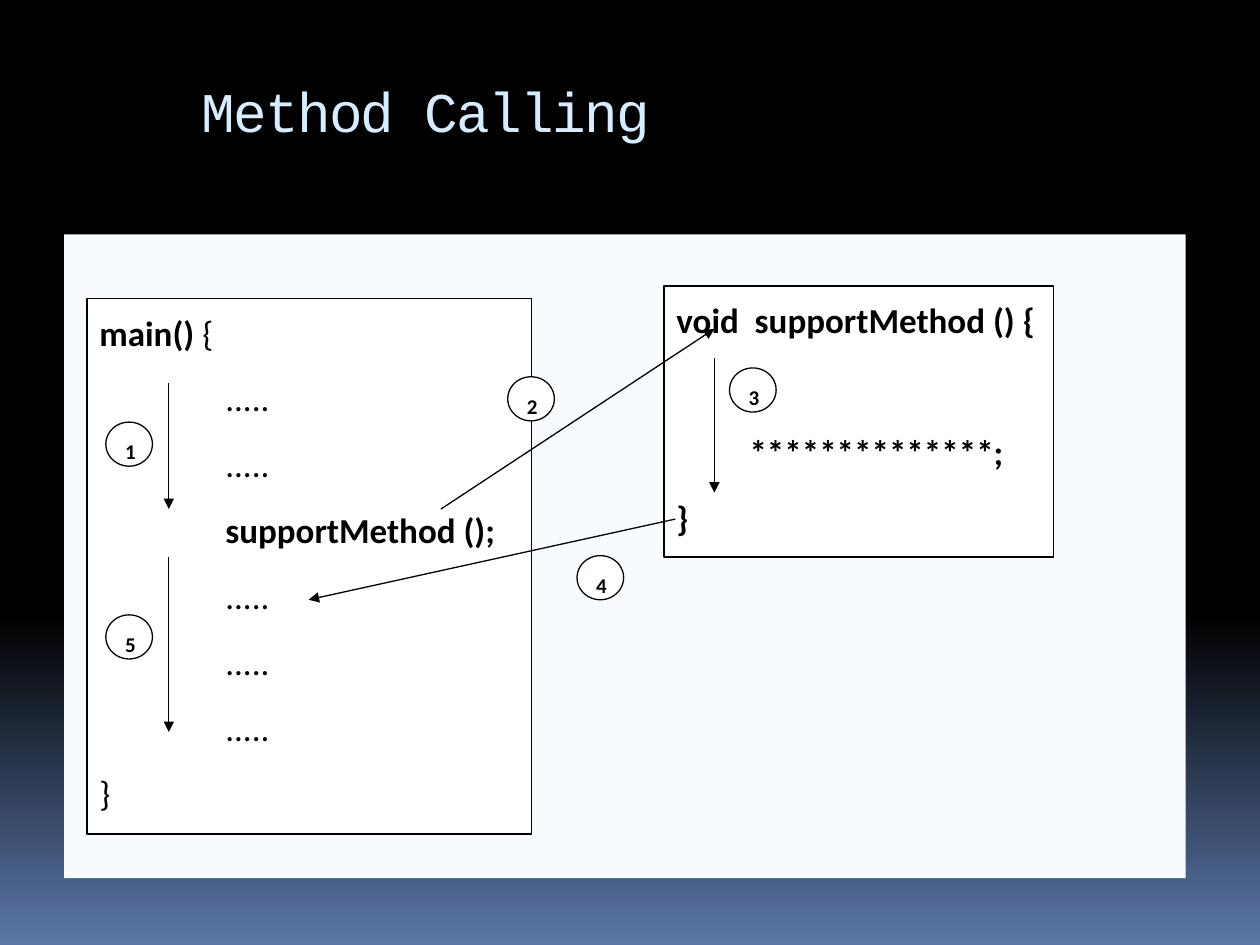
from dataclasses import dataclass

from lxml import etree
from pptx import Presentation
from pptx import util as u
from pptx.dml.color import RGBColor
from pptx.enum import shapes, text
from pptx.oxml.ns import qn


@dataclass(frozen=True)
class Theme:
    ink: str = "000000"
    paper: str = "FFFFFF"
    panel: str = "F7FBFF"
    title: str = "D6ECFF"
    glow: str = "5B77A8"
    mono: str = "Courier New"
    sans: str = "Calibri"
    head: int = 32
    code: int = 20
    note: int = 12
    line: float = 0.75


def rgb(code):
    return RGBColor.from_string(code)


def apply(obj, **vals):
    for key, val in vals.items():
        setattr(obj, key, val)


class Deck:
    def __init__(self, theme):
        self.theme = theme
        self.prs = Presentation()
        apply(self.prs, slide_width=u.Inches(10), slide_height=u.Inches(7.5))
        self.slide = self.prs.slides.add_slide(self.prs.slide_layouts[6])

    def back(self):
        fill = self.slide.background.fill
        fill.gradient()
        fill.gradient_angle = 270
        stops = ((0.65, self.theme.ink), (1, self.theme.glow))
        for stop, (pos, hue) in zip(fill.gradient_stops, stops):
            stop.position = pos
            stop.color.rgb = rgb(hue)

    def run(self, para, words, size, bold=False, face=None, hue=None):
        run = para.add_run()
        run.text = words
        apply(run.font, size=u.Pt(size), bold=bold,
              name=face or self.theme.sans)
        run.font.color.rgb = rgb(hue or self.theme.ink)
        return run

    def title(self, words, *box):
        frame = self.slide.shapes.add_textbox(*map(u.Inches, box)).text_frame
        frame.word_wrap = True
        run = self.run(frame.paragraphs[0], words, self.theme.head,
                       face=self.theme.mono, hue=self.theme.title)
        run.font._element.set("spc", "-100")

    def shape(self, kind, fill, box, edge=True):
        item = self.slide.shapes.add_shape(kind, *map(u.Inches, box))
        item.shadow.inherit = False
        item.fill.solid()
        item.fill.fore_color.rgb = rgb(fill)
        if edge:
            item.line.color.rgb = rgb(self.theme.ink)
            item.line.width = u.Pt(self.theme.line)
        else:
            item.line.fill.background()
        apply(item.text_frame, word_wrap=True,
              vertical_anchor=text.MSO_ANCHOR.TOP)
        return item

    def panel(self, *box):
        self.shape(shapes.MSO_SHAPE.RECTANGLE, self.theme.panel, box, False)

    def label(self, item, rows, size, align):
        """Rows are (indent in inches, space before in points, runs)."""
        frame = item.text_frame
        for i, (indent, gap, runs) in enumerate(rows):
            para = frame.add_paragraph() if i else frame.paragraphs[0]
            apply(para, alignment=align, line_spacing=1.15,
                  space_before=u.Pt(gap), space_after=u.Pt(10))
            if indent:
                para._p.get_or_add_pPr().set("marL", str(u.Inches(indent)))
            for words, bold in runs:
                self.run(para, words, size, bold)

    def code(self, box, rows):
        item = self.shape(shapes.MSO_SHAPE.RECTANGLE, self.theme.paper, box)
        self.label(item, rows, self.theme.code, text.PP_ALIGN.LEFT)

    def step(self, num, left, top):
        item = self.shape(shapes.MSO_SHAPE.OVAL, self.theme.paper,
                          (left, top, 0.37, 0.35))
        self.label(item, [(0, 0, [(str(num), True)])],
                   self.theme.note, text.PP_ALIGN.CENTER)

    def arrow(self, *ends):
        item = self.slide.shapes.add_connector(
            shapes.MSO_CONNECTOR.STRAIGHT, *map(u.Inches, ends))
        item.line.color.rgb = rgb(self.theme.ink)
        item.line.width = u.Pt(self.theme.line)
        props = item._element.spPr
        etree.SubElement(props.find(qn("a:ln")), qn("a:tailEnd"),
                         type="triangle")
        etree.SubElement(props, qn("a:effectLst"))


def main():
    deck = Deck(Theme())
    deck.back()
    deck.title("Method Calling", 1.5, 0.56, 8.5, 1)
    deck.panel(0.51, 1.86, 8.9, 5.11)

    dots = (1, 0, [(".....", False)])
    deck.code((0.69, 2.37, 3.53, 4.25), [
        (0, 0, [("main()", True), (" {", False)]),
        *[dots] * 2,
        (1, 0, [("supportMethod ();", True)]),
        *[dots] * 3,
        (0, 0, [("}", False)]),
    ])
    deck.code((5.27, 2.27, 3.09, 2.15), [
        (0, 0, [("void  supportMethod () {", True)]),
        (0.58, 38, [("**************;", True)]),
        (0, 0, [("}", True)]),
    ])

    for ends in (
        (1.34, 3.04, 1.34, 4.04),
        (1.34, 4.42, 1.34, 5.81),
        (3.5, 4.04, 5.67, 2.61),
        (5.67, 2.84, 5.67, 3.91),
        (5.36, 4.12, 2.45, 4.76),
    ):
        deck.arrow(*ends)

    spots = ((0.84, 3.35), (4.03, 2.99), (5.79, 2.92),
             (4.58, 4.41), (0.84, 4.88))
    for num, spot in enumerate(spots, 1):
        deck.step(num, *spot)
    deck.prs.save("out.pptx")


if __name__ == "__main__":
    main()
